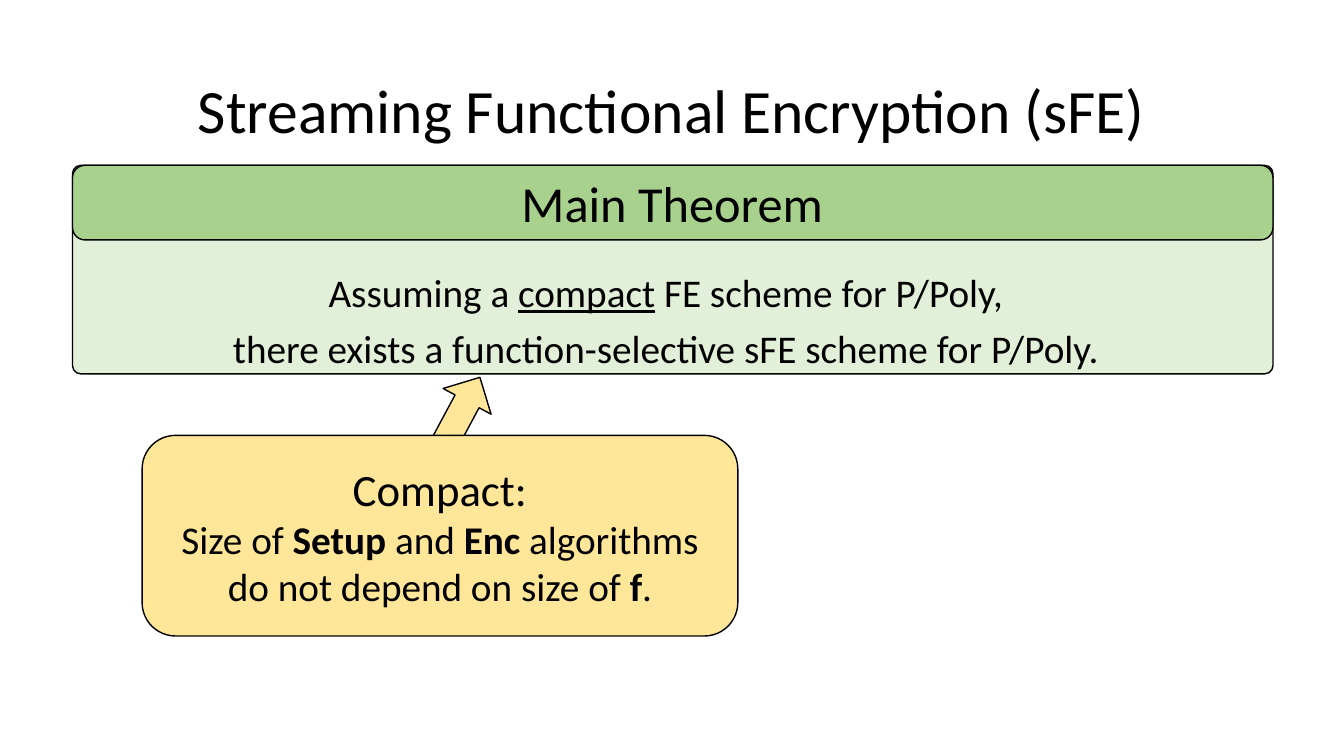
from dataclasses import dataclass
from typing import NamedTuple, Optional

from pptx import Presentation
from pptx.dml.color import RGBColor as Rgb
from pptx.enum.shapes import MSO_SHAPE as Preset
from pptx.enum.text import MSO_ANCHOR as Anchor, PP_ALIGN as Align
from pptx.util import Pt


@dataclass(frozen=True)
class Theme:
    font: str = "Calibri"
    ink: Rgb = Rgb(0x00, 0x00, 0x00)
    theorem_body: Rgb = Rgb(0xE2, 0xF0, 0xD9)
    theorem_header: Rgb = Rgb(0xA9, 0xD1, 0x8E)
    callout: Rgb = Rgb(0xFF, 0xE6, 0x99)
    title_size: float = 44
    header_size: float = 36
    callout_size: float = 32
    body_size: float = 28
    outline: float = 1


THEME = Theme()


class Box(NamedTuple):
    left: float
    top: float
    width: float
    height: float

    def lengths(self) -> list:
        return [Pt(value) for value in self]


class Span(NamedTuple):
    text: str
    bold: bool = False
    underline: bool = False


class Line(NamedTuple):
    size: float
    spans: list


@dataclass(frozen=True)
class Panel:
    preset: Preset
    box: Box
    fill: Rgb
    corner: Optional[float] = None
    rotation: float = 0
    lines: tuple = ()


@dataclass(frozen=True)
class Label:
    box: Box
    lines: tuple
    anchor: Anchor = Anchor.TOP
    space_before: float = 10


def write_lines(frame, lines, anchor, line_spacing=1.0, space_before=0.0) -> None:
    """Fill a text frame with centred paragraphs."""
    frame.word_wrap = True
    frame.vertical_anchor = anchor
    for index, line in enumerate(lines):
        paragraph = frame.add_paragraph() if index else frame.paragraphs[0]
        paragraph.alignment = Align.CENTER
        paragraph.line_spacing = line_spacing
        paragraph.space_before = Pt(space_before)
        for span in line.spans:
            run = paragraph.add_run()
            run.text = span.text
            run.font.name = THEME.font
            run.font.size = Pt(line.size)
            run.font.color.rgb = THEME.ink
            run.font.bold = span.bold
            run.font.underline = span.underline


def draw_panel(slide, panel: Panel) -> None:
    shape = slide.shapes.add_shape(panel.preset, *panel.box.lengths())
    shape.shadow.inherit = False
    shape.rotation = panel.rotation
    if panel.corner is not None:
        shape.adjustments[0] = panel.corner
    shape.fill.solid()
    shape.fill.fore_color.rgb = panel.fill
    shape.line.color.rgb = THEME.ink
    shape.line.width = Pt(THEME.outline)
    if panel.lines:
        write_lines(shape.text_frame, panel.lines, Anchor.MIDDLE)


def draw_label(slide, label: Label) -> None:
    frame = slide.shapes.add_textbox(*label.box.lengths()).text_frame
    write_lines(frame, label.lines, label.anchor, 0.9, label.space_before)


TITLE = Label(
    Box(66, 28.8, 828, 104.4),
    (Line(THEME.title_size, [Span("Streaming Functional Encryption (sFE)")]),),
    Anchor.MIDDLE,
    0,
)
THEOREM_PANELS = (
    Panel(Preset.ROUNDED_RECTANGLE, Box(51.8, 118.1, 857.5, 149), THEME.theorem_body, 0.04),
    Panel(Preset.ROUNDED_RECTANGLE, Box(51.8, 118.1, 857.5, 53.3), THEME.theorem_header),
)
THEOREM_LABELS = (
    Label(
        Box(61.5, 192, 828, 176),
        (
            Line(THEME.body_size, [
                Span("Assuming a "),
                Span("compact", underline=True),
                Span(" FE scheme for P/Poly,"),
            ]),
            Line(THEME.body_size, [
                Span("there exists a function-selective sFE scheme for P/Poly."),
            ]),
        ),
    ),
    Label(
        Box(331.9, 124.6, 296.6, 47.5),
        (Line(THEME.header_size, [Span("Main Theorem")]),),
    ),
)
COMPACT_PANELS = (
    Panel(Preset.DOWN_ARROW, Box(308.2, 265.7, 38.9, 64.1), THEME.callout, rotation=208.2),
    Panel(
        Preset.ROUNDED_RECTANGLE,
        Box(101.5, 311, 425.5, 143.3),
        THEME.callout,
        lines=(
            Line(THEME.callout_size, [Span("Compact:")]),
            Line(THEME.body_size, [
                Span("Size of "),
                Span("Setup ", bold=True),
                Span("and "),
                Span("Enc", bold=True),
                Span(" algorithms do not depend on size of "),
                Span("f", bold=True),
                Span("."),
            ]),
        ),
    ),
)


def main() -> None:
    deck = Presentation()
    deck.slide_width, deck.slide_height = Pt(960), Pt(540)
    slide = deck.slides.add_slide(deck.slide_layouts[6])
    draw_label(slide, TITLE)
    for panel in THEOREM_PANELS:
        draw_panel(slide, panel)
    for label in THEOREM_LABELS:
        draw_label(slide, label)
    for panel in COMPACT_PANELS:
        draw_panel(slide, panel)
    deck.save("out.pptx")


if __name__ == "__main__":
    main()
